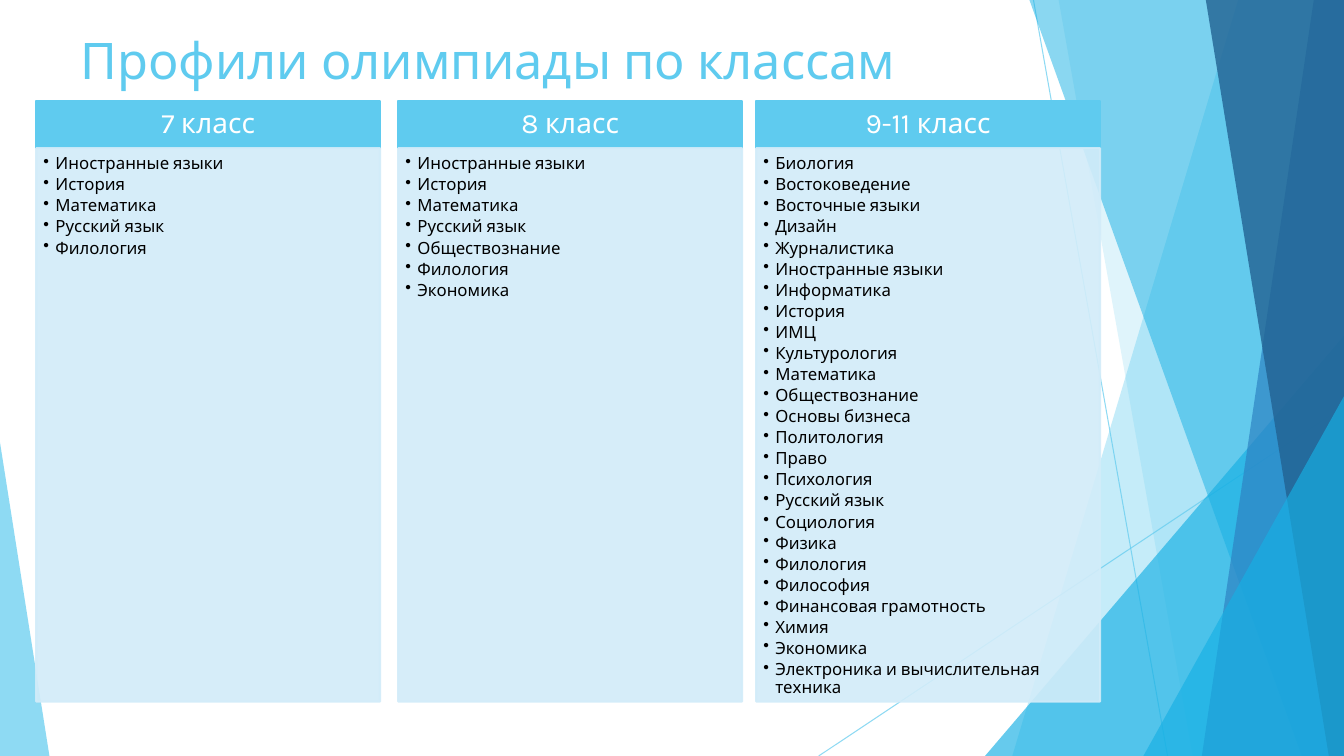
from lxml.etree import SubElement
from pptx import Presentation
from pptx.dml.color import RGBColor
from pptx.enum.shapes import MSO_CONNECTOR, MSO_SHAPE
from pptx.enum.text import MSO_ANCHOR, PP_ALIGN
from pptx.oxml.ns import qn
from pptx.util import Inches, Pt

TITLE = "Профили олимпиады по классам"
COLUMNS = [
    (0.36, "7 класс", [
        "Иностранные языки", "История", "Математика", "Русский язык", "Филология",
    ]),
    (3.95, "8 класс", [
        "Иностранные языки", "История", "Математика", "Русский язык",
        "Обществознание", "Филология", "Экономика",
    ]),
    (7.5, "9-11 класс", [
        "Биология", "Востоковедение", "Восточные языки", "Дизайн", "Журналистика",
        "Иностранные языки", "Информатика", "История", "ИМЦ", "Культурология",
        "Математика", "Обществознание", "Основы бизнеса", "Политология", "Право",
        "Психология", "Русский язык", "Социология", "Физика", "Филология",
        "Философия", "Финансовая грамотность", "Химия", "Экономика",
        "Электроника и вычислительная техника",
    ]),
]

THEME = {
    "font": "Karla", "title_size": 36, "header_size": 20, "item_size": 12,
    "sky": "5FCBEF", "azure": "17B0E4", "blue": "2E83C3", "navy": "226292",
    "pale": "D2ECF9", "white": "FFFFFF", "black": "000000",
}

PAGE_WIDTH, PAGE_HEIGHT = 13.33, 7.5
COLUMN_WIDTH = 3.41
HEADER_TOP, HEADER_HEIGHT = 1, 0.47
BODY_HEIGHT = 5.49
BULLET_INDENT = 0.12

RAYS = [((10.25, 0), (11.58, 7.5)), ((13.33, 4.03), (8.12, 7.5))]
FACETS = [
    ("band", 12.28, 10.04, "sky", 36),
    ("band", 10.5, 11.83, "sky", 20),
    ("triangle", (9.77, 3.33, 3.56, 4.17), 1, "azure", 66),
    ("band", 10.21, 12.91, "azure", 50),
    ("band", 13.03, 11.92, "blue", 70),
    ("band", 11.96, 13.18, "navy", 80),
    ("triangle", (11.34, 3.93, 1.99, 3.57), 1, "azure", 66),
    ("triangle", (0, 4.39, 0.49, 3.11), 0, "sky", 70),
]


def color(name):
    return RGBColor.from_string(THEME[name])


def set_opacity(element, percent):
    for paint in element.iter(qn("a:srgbClr")):
        SubElement(paint, qn("a:alpha")).set("val", str(percent * 1000))


def paint_shape(shape, fill, opacity=100, line_width=None):
    shape.shadow.inherit = False
    shape.fill.solid()
    shape.fill.fore_color.rgb = color(fill)
    if line_width:
        shape.line.color.rgb = color(fill)
        shape.line.width = Pt(line_width)
    else:
        shape.line.fill.background()
    if opacity < 100:
        set_opacity(shape._element.spPr, opacity)


def add_ray(page, start, end):
    ray = page.shapes.add_connector(
        MSO_CONNECTOR.STRAIGHT, *[Inches(value) for value in start + end])
    ray.line.color.rgb = color("sky")
    ray.line.width = Pt(0.75)
    set_opacity(ray._element.spPr, 70)
    SubElement(ray._element.spPr, qn("a:effectLst"))


def add_band(page, top_left, bottom_left):
    builder = page.shapes.build_freeform(Inches(top_left), 0)
    corners = [(PAGE_WIDTH, 0), (PAGE_WIDTH, PAGE_HEIGHT), (bottom_left, PAGE_HEIGHT)]
    builder.add_line_segments([(Inches(x), Inches(y)) for x, y in corners])
    return builder.convert_to_shape()


def add_triangle(page, place, apex):
    triangle = page.shapes.add_shape(
        MSO_SHAPE.ISOSCELES_TRIANGLE, *[Inches(value) for value in place])
    triangle.adjustments[0] = apex
    return triangle


def set_text(shape, lines, size, ink, insets, anchor=MSO_ANCHOR.TOP, align=PP_ALIGN.LEFT):
    frame = shape.text_frame
    frame.word_wrap = True
    frame.vertical_anchor = anchor
    frame.margin_left, frame.margin_top, frame.margin_right, frame.margin_bottom = [
        Inches(inset) for inset in insets]
    frame.text = "\n".join(lines)
    for para in frame.paragraphs:
        para.alignment = align
        for span in para.runs:
            span.font.name = THEME["font"]
            span.font.size = Pt(THEME[size])
            span.font.color.rgb = color(ink)
    return frame.paragraphs


def add_bullet(para):
    para.level = 1
    para.line_spacing = 0.9
    para.space_after = Pt(2.1)
    properties = para._p.get_or_add_pPr()
    properties.set("marL", str(Inches(BULLET_INDENT)))
    properties.set("indent", str(-Inches(BULLET_INDENT)))
    SubElement(properties, qn("a:buChar")).set("char", "•")


def add_panel(page, left, top, height, fill, opacity=100):
    panel = page.shapes.add_shape(
        MSO_SHAPE.RECTANGLE, Inches(left), Inches(top), Inches(COLUMN_WIDTH), Inches(height))
    paint_shape(panel, fill, opacity, 1.5)
    return panel


def add_column(page, left, heading, subjects):
    header = add_panel(page, left, HEADER_TOP, HEADER_HEIGHT, "sky")
    heading_paras = set_text(header, [heading], "header_size", "white",
                             (0.16, 0.09, 0.16, 0.09), MSO_ANCHOR.MIDDLE, PP_ALIGN.CENTER)
    heading_paras[0].line_spacing = 0.9
    body = add_panel(page, left, HEADER_TOP + HEADER_HEIGHT, BODY_HEIGHT, "pale", 90)
    for para in set_text(body, subjects, "item_size", "black", (0.07, 0.07, 0.09, 0.1)):
        add_bullet(para)


def main():
    deck = Presentation()
    deck.slide_width, deck.slide_height = Inches(PAGE_WIDTH), Inches(PAGE_HEIGHT)
    page = deck.slides.add_slide(deck.slide_layouts[6])
    for start, end in RAYS:
        add_ray(page, start, end)
    makers = {"band": add_band, "triangle": add_triangle}
    for kind, first, second, fill, opacity in FACETS:
        paint_shape(makers[kind](page, first, second), fill, opacity)
    title = page.shapes.add_textbox(Inches(0.7), Inches(0.24), Inches(9.4), Inches(1.44))
    set_text(title, [TITLE], "title_size", "sky", (0.1, 0.05, 0.1, 0.05))
    for left, heading, subjects in COLUMNS:
        add_column(page, left, heading, subjects)
    deck.save("out.pptx")


if __name__ == "__main__":
    main()
